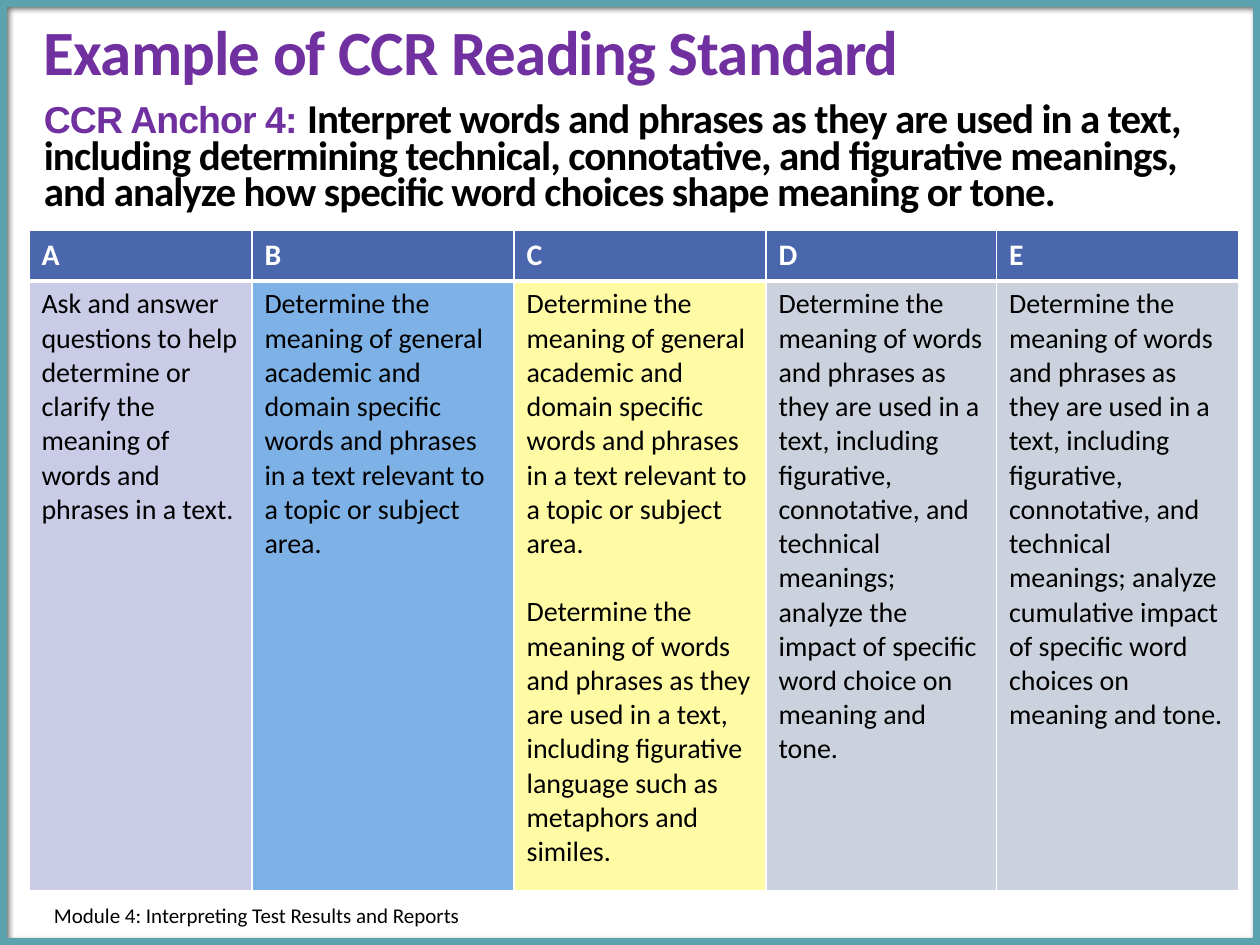
from dataclasses import dataclass

import pptx
import pptx.dml.color
import pptx.enum.shapes
import pptx.enum.text
import pptx.oxml
import pptx.oxml.ns
import pptx.util
from pptx.dml.color import RGBColor
from pptx.util import Inches, Pt

PURPLE = RGBColor(0x70, 0x30, 0xA0)
BLACK = RGBColor(0, 0, 0)
WHITE = RGBColor(0xFF, 0xFF, 0xFF)
TEAL = RGBColor(0x5A, 0xA2, 0xAE)
HEADER_BLUE = RGBColor(0x4A, 0x66, 0xAC)
LAVENDER = RGBColor(0xC9, 0xCB, 0xE7)
SKY = RGBColor(0x7E, 0xB2, 0xE6)
YELLOW = RGBColor(0xFF, 0xFB, 0xA4)
GREY = RGBColor(0xCC, 0xD2, 0xDD)

ANCHOR = pptx.enum.text.MSO_ANCHOR


@dataclass(frozen=True)
class TextRun:
    text: str
    size: float
    color: RGBColor = BLACK
    bold: bool = False
    font: str = "Calibri"
    spacing: float = 0


@dataclass(frozen=True)
class Level:
    letter: str
    width: float
    fill: RGBColor
    standards: tuple[str, ...]


ACADEMIC = ("Determine the meaning of general academic and domain specific words "
            "and phrases in a text relevant to a topic or subject area.")
IN_TEXT = "Determine the meaning of words and phrases as they are used in a text, including "
MEANINGS = IN_TEXT + "figurative, connotative, and technical meanings; analyze "

LEVELS = [
    Level("A", 1.77, LAVENDER, ("Ask and answer questions to help determine or clarify "
                                "the meaning of words and phrases in a text.",)),
    Level("B", 2.08, SKY, (ACADEMIC,)),
    Level("C", 2.0, YELLOW, (ACADEMIC, IN_TEXT + "figurative language such as "
                             "metaphors and similes.")),
    Level("D", 1.83, GREY, (MEANINGS + "the impact of specific word choice on "
                            "meaning and tone.",)),
    Level("E", 1.92, GREY, (MEANINGS + "cumulative impact of specific word choices on "
                            "meaning and tone.",)),
]
ROW_HEIGHTS = (0.4, 4.84)


def add_run(paragraph, part: TextRun) -> None:
    run = paragraph.add_run()
    run.text = part.text
    run.font.name = part.font
    run.font.size = Pt(part.size)
    run.font.bold = part.bold
    run.font.color.rgb = part.color
    if part.spacing:
        run.font._element.set("spc", str(round(part.spacing * 100)))


def add_text(slide, box: tuple[float, ...], parts: list[TextRun], anchor,
             line_spacing: float = 1.0, bottom_inset: float = 0.05) -> None:
    frame = slide.shapes.add_textbox(*map(Inches, box)).text_frame
    frame.word_wrap = True
    frame.vertical_anchor = anchor
    frame.margin_bottom = Inches(bottom_inset)
    paragraph = frame.paragraphs[0]
    paragraph.line_spacing = line_spacing
    for part in parts:
        add_run(paragraph, part)


def set_borders(cell, top: float, bottom: float) -> None:
    """Draw white cell borders; widths are in points, 1 at the sides."""
    properties = cell._tc.get_or_add_tcPr()
    widths = {"lnL": 1, "lnR": 1, "lnT": top, "lnB": bottom}
    for position, (side, width) in enumerate(widths.items()):
        properties.insert(position, pptx.oxml.parse_xml(
            f'<a:{side} {pptx.oxml.ns.nsdecls("a")} w="{Pt(width)}">'
            f'<a:solidFill><a:srgbClr val="{WHITE}"/></a:solidFill></a:{side}>'))


def fill_cell(cell, fill: RGBColor, parts: list[TextRun], top: float, bottom: float) -> None:
    cell.fill.solid()
    cell.fill.fore_color.rgb = fill
    set_borders(cell, top, bottom)
    frame = cell.text_frame
    for index, part in enumerate(parts):
        paragraph = frame.add_paragraph() if index else frame.paragraphs[0]
        if index:
            paragraph.space_before = Pt(19.5)
        add_run(paragraph, part)


def add_levels_table(slide) -> None:
    total_width = sum(level.width for level in LEVELS)
    table = slide.shapes.add_table(
        len(ROW_HEIGHTS), len(LEVELS), Inches(0.23), Inches(1.83),
        Inches(total_width), Inches(sum(ROW_HEIGHTS))).table
    for row, height in zip(table.rows, ROW_HEIGHTS):
        row.height = Inches(height)
    for column, level in enumerate(LEVELS):
        table.columns[column].width = Inches(level.width)
        fill_cell(table.cell(0, column), HEADER_BLUE,
                  [TextRun(level.letter, 17, WHITE, bold=True)], top=1, bottom=3)
        fill_cell(table.cell(1, column), level.fill,
                  [TextRun(text, 16) for text in level.standards], top=3, bottom=1)


def add_page_frame(slide, width: int, height: int) -> None:
    frame = slide.shapes.add_shape(
        pptx.enum.shapes.MSO_SHAPE.RECTANGLE, 0, 0, width, height)
    frame.fill.background()
    frame.line.color.rgb = TEAL
    frame.line.width = Pt(8)
    frame.shadow.inherit = False
    effects = frame._element.spPr.find(pptx.oxml.ns.qn("a:effectLst"))
    effects.append(pptx.oxml.parse_xml(
        f'<a:outerShdw {pptx.oxml.ns.nsdecls("a")} blurRad="{Pt(3)}" dist="{Pt(2)}" '
        f'dir="{45 * 60000}" algn="tl" rotWithShape="0">'
        f'<a:srgbClr val="{BLACK}"><a:alpha val="60000"/></a:srgbClr></a:outerShdw>'))


def main() -> None:
    deck = pptx.Presentation()
    deck.slide_width, deck.slide_height = Inches(10), Inches(7.5)
    slide = deck.slides.add_slide(deck.slide_layouts[6])

    add_text(slide, (0.25, 0, 9.58, 1.08),
             [TextRun("Example of CCR Reading Standard", 36, PURPLE, True, spacing=-0.5)],
             ANCHOR.BOTTOM, line_spacing=0.85, bottom_inset=0.38)
    add_levels_table(slide)
    add_page_frame(slide, deck.slide_width, deck.slide_height)
    add_text(slide, (0.25, 0.75, 9.33, 1), [
        TextRun("CCR Anchor 4: ", 21.4, PURPLE, True, "Arial", -0.5),
        TextRun("Interpret words and phrases as they are used in a text, including "
                "determining technical, connotative, and figurative meanings, and analyze "
                "how specific word choices shape meaning or tone.",
                23.4, bold=True, spacing=-0.5),
    ], ANCHOR.BOTTOM, line_spacing=0.75)
    add_text(slide, (0.33, 7.06, 6.65, 0.4),
             [TextRun("Module 4: Interpreting Test Results and Reports", 12)],
             ANCHOR.MIDDLE)
    deck.save("out.pptx")


if __name__ == "__main__":
    main()
